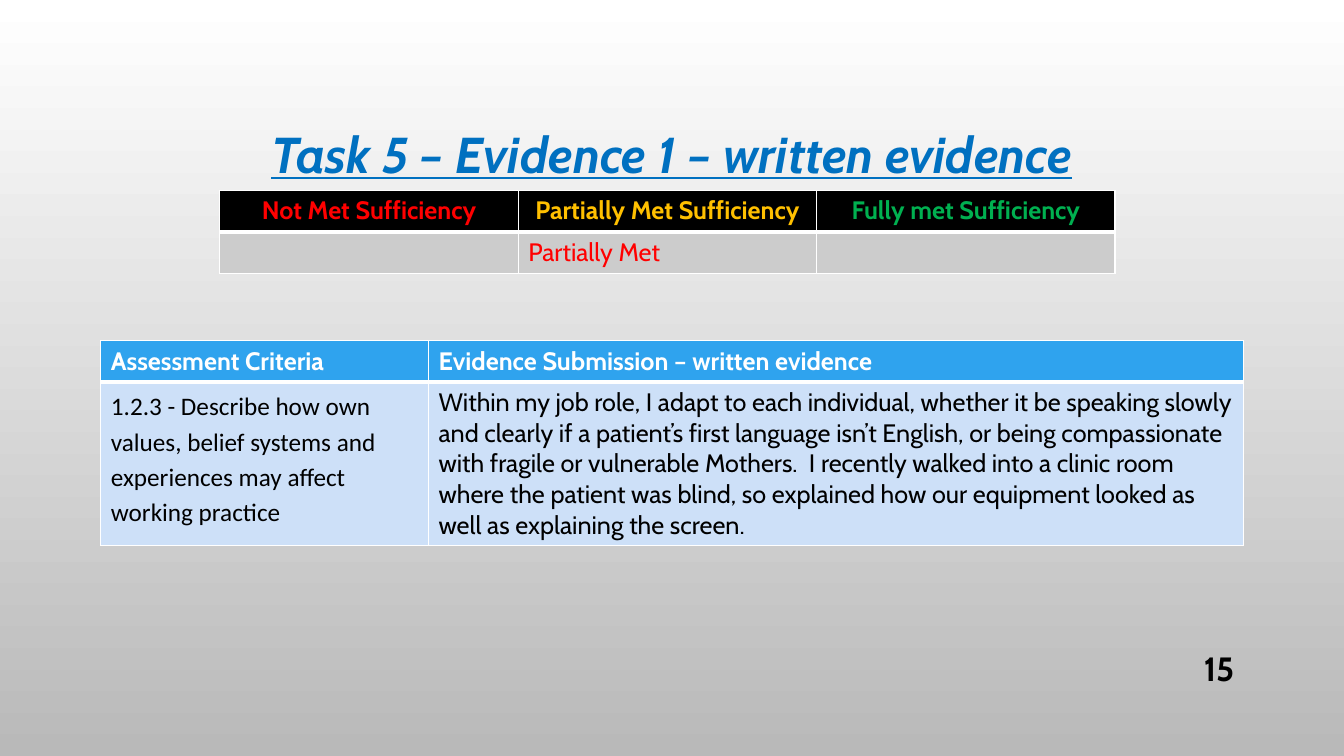
from dataclasses import dataclass

from lxml import etree
from pptx import Presentation
from pptx.dml.color import RGBColor
from pptx.enum.text import MSO_ANCHOR, PP_ALIGN
from pptx.oxml.ns import qn
from pptx.util import Inches, Pt

LEFT, MID, RIGHT = PP_ALIGN.LEFT, PP_ALIGN.CENTER, PP_ALIGN.RIGHT
CENTRE = MSO_ANCHOR.MIDDLE
FONT = "Cabin"
HEX = {
    "white": "FFFFFF", "grey": "B9B9B9", "black": "000000",
    "title": "0070C0", "red": "FF0000", "amber": "FFC000",
    "green": "00B050", "blue": "2FA3EE", "pale": "CDE0F8",
    "silver": "CCCCCC",
}


@dataclass
class Cell:
    text: str
    tint: str
    bold: bool = False
    align: int = LEFT
    font: str = FONT
    line: float = 1.0
    after: float = 0


@dataclass
class Grid:
    left: float
    top: float
    cols: list[float]
    rows: list[float]
    fills: list[str]
    cells: list[list[Cell]]


def shade(name: str) -> RGBColor:
    return RGBColor.from_string(HEX[name])


def write(frame, text: str, *, size: float = 18, tint: str = "black",
          font: str = FONT, bold: bool = False, slant: bool = False,
          under: bool = False, align: int = LEFT, line: float = 1.0,
          after: float = 0) -> None:
    frame.word_wrap = True
    para = frame.paragraphs[0]
    para.alignment = align
    para.line_spacing = line
    para.space_after = Pt(after)
    para.font.size = Pt(size)
    if not text:
        return
    run = para.add_run()
    run.text = text
    face = run.font
    face.name, face.size = font, Pt(size)
    face.bold, face.italic, face.underline = bold, slant, under
    face.color.rgb = shade(tint)


def label(slide, box: tuple, text: str, **style) -> None:
    frame = slide.shapes.add_textbox(*map(Inches, box)).text_frame
    frame.vertical_anchor = CENTRE
    write(frame, text, **style)


def border(cell, head: bool) -> None:
    props = cell._tc.get_or_add_tcPr()
    widths = {"lnL": 1, "lnR": 1, "lnT": 1 if head else 3,
              "lnB": 3 if head else 1}
    for side, width in widths.items():
        edge = etree.SubElement(props, qn(f"a:{side}"), w=str(Pt(width)))
        fill = etree.SubElement(edge, qn("a:solidFill"))
        etree.SubElement(fill, qn("a:srgbClr"), val=HEX["white"])


def draw(slide, grid: Grid) -> None:
    size = (grid.left, grid.top, sum(grid.cols), sum(grid.rows))
    table = slide.shapes.add_table(
        len(grid.rows), len(grid.cols), *map(Inches, size)).table
    table.horz_banding = False
    for col, width in zip(table.columns, grid.cols):
        col.width = Inches(width)
    for r, (high, fill, items) in enumerate(
            zip(grid.rows, grid.fills, grid.cells)):
        table.rows[r].height = Inches(high)
        for c, item in enumerate(items):
            cell = table.cell(r, c)
            border(cell, r == 0)
            cell.fill.solid()
            cell.fill.fore_color.rgb = shade(fill)
            write(cell.text_frame, item.text, tint=item.tint,
                  bold=item.bold, align=item.align, font=item.font,
                  line=item.line, after=item.after)


CRITERIA = Grid(1, 3.38, [3.25, 8.08], [0.41, 1.62], ["blue", "pale"], [
    [Cell("Assessment Criteria", "white", True),
     Cell("Evidence Submission – written evidence", "white", True)],
    [Cell("1.2.3 - Describe how own values, belief systems and experiences "
          "may affect working practice", "black", font="Calibri",
          line=1.15, after=10),
     Cell("Within my job role, I adapt to each individual, whether it be "
          "speaking slowly and clearly if a patient’s first language isn’t "
          "English, or being compassionate with fragile or vulnerable "
          "Mothers.  I recently walked into a clinic room where the patient "
          "was blind, so explained how our equipment looked as well as "
          "explaining the screen.", "black")],
])
RATING = Grid(2.18, 1.89, [2.96] * 3, [0.41] * 2, ["black", "silver"], [
    [Cell("Not Met Sufficiency", "red", True, MID),
     Cell("Partially Met Sufficiency", "amber", True, MID),
     Cell("Fully met Sufficiency", "green", True, MID)],
    [Cell("", "red"), Cell("Partially Met", "red"), Cell("", "red")],
])


def main() -> None:
    deck = Presentation()
    deck.slide_width, deck.slide_height = Inches(13.33), Inches(7.5)
    slide = deck.slides.add_slide(deck.slide_layouts[6])

    # Background fading downwards
    back = slide.background.fill
    back.gradient()
    back.gradient_angle = 270
    for stop, name in zip(back.gradient_stops, ("white", "grey")):
        stop.color.rgb = shade(name)

    # Title, tables and page number
    label(slide, (1, 0.68, 11.33, 1.75),
          "Task 5 – Evidence 1 – written evidence", size=36, tint="title",
          bold=True, slant=True, under=True, align=MID, line=0.9)
    draw(slide, CRITERIA)
    label(slide, (11.5, 6.43, 0.84, 0.4), "15", size=24, bold=True,
          align=RIGHT)
    draw(slide, RATING)
    deck.save("out.pptx")


if __name__ == "__main__":
    main()
